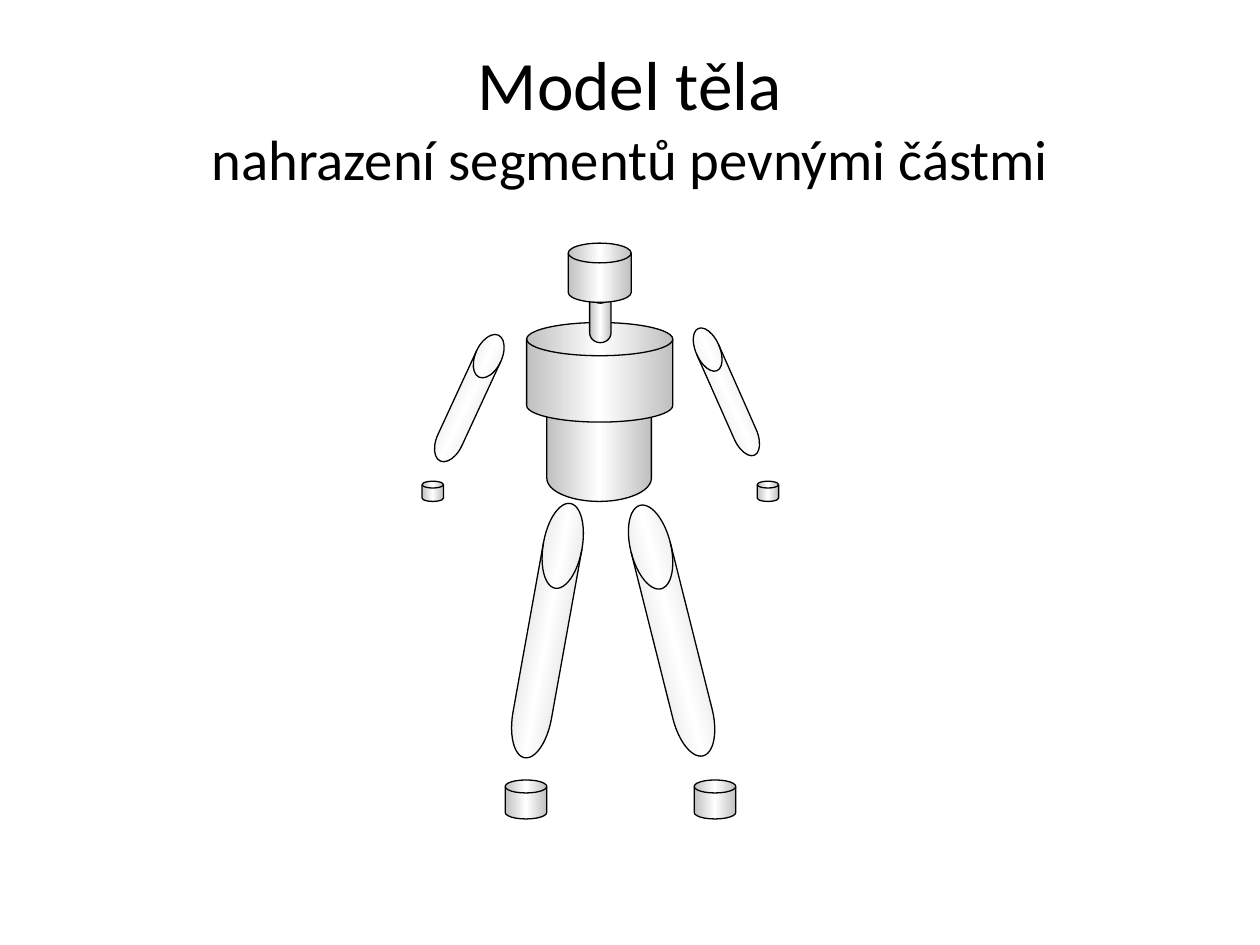
from copy import deepcopy
from dataclasses import dataclass

from pptx import Presentation
from pptx.dml.color import RGBColor
from pptx.enum.shapes import MSO_SHAPE
from pptx.enum.text import MSO_ANCHOR, PP_ALIGN
from pptx.oxml.ns import qn
from pptx.util import Inches, Pt


@dataclass(frozen=True)
class Theme:
    font: str = "Calibri"
    title_size: float = 39.6
    subtitle_size: float = 32.4
    ink: RGBColor = RGBColor(0, 0, 0)
    edge: RGBColor = RGBColor(0xC0, 0xC0, 0xC0)
    shine: RGBColor = RGBColor(0xFF, 0xFF, 0xFF)
    outline: float = 0.75


THEME = Theme()

BODY_SEGMENTS = {
    "abdomen": (4.34, 2.88, 0.83, 1.1, 0),
    "chest": (4.18, 2.56, 1.16, 0.79, 0),
    "left arm": (3.62, 2.61, 0.21, 1.1, 24.8),
    "left leg": (4.19, 3.98, 0.31, 2.05, 10.2),
    "right leg": (5.17, 3.98, 0.32, 2.05, 345.9),
    "right arm": (5.67, 2.56, 0.19, 1.1, 336.1),
    "right foot": (5.51, 6.19, 0.33, 0.31, 0),
    "right hand": (6.01, 3.82, 0.17, 0.16, 0),
    "left hand": (3.35, 3.82, 0.17, 0.16, 0),
    "left foot": (4.01, 6.19, 0.33, 0.31, 0),
    "neck": (4.68, 2.25, 0.17, 0.47, 0),
    "head": (4.51, 1.93, 0.5, 0.47, 0),
}


def add_text(para, text, *, size, color=THEME.ink, font=THEME.font):
    span = para.add_run()
    span.text = text
    span.font.size = Pt(size)
    span.font.name = font
    span.font.color.rgb = color


def fill_title(page):
    title = page.shapes.title
    title.left, title.top = Inches(0.5), Inches(0.3)
    title.width, title.height = Inches(9), Inches(1.25)
    title.text_frame.vertical_anchor = MSO_ANCHOR.MIDDLE
    para = title.text_frame.paragraphs[0]
    para.alignment = PP_ALIGN.CENTER
    add_text(para, "Model těla", size=THEME.title_size)
    para.add_line_break()
    add_text(para, "nahrazení segmentů pevnými částmi", size=THEME.subtitle_size)


def apply_cylinder_gradient(shape):
    shape.fill.gradient()
    shape.fill.gradient_angle = 0
    stop_list = shape._element.spPr.find(qn("a:gradFill")).find(qn("a:gsLst"))
    stop_list.append(deepcopy(stop_list[-1]))
    colors = (THEME.edge, THEME.shine, THEME.edge)
    for stop, position, color in zip(shape.fill.gradient_stops, (0, 0.5, 1), colors):
        stop.position = position
        stop.color.rgb = color


def add_segment(group, left, top, width, height, rotation):
    segment = group.shapes.add_shape(
        MSO_SHAPE.FLOWCHART_MAGNETIC_DISK,
        Inches(left), Inches(top), Inches(width), Inches(height),
    )
    segment.rotation = rotation
    segment.shadow.inherit = False
    segment.line.color.rgb = THEME.ink
    segment.line.width = Pt(THEME.outline)
    apply_cylinder_gradient(segment)


def main():
    deck = Presentation()
    deck.slide_width, deck.slide_height = Inches(10), Inches(7.5)
    page = deck.slides.add_slide(deck.slide_layouts[5])
    fill_title(page)
    figure = page.shapes.add_group_shape()
    for segment in BODY_SEGMENTS.values():
        add_segment(figure, *segment)
    deck.save("out.pptx")


if __name__ == "__main__":
    main()
